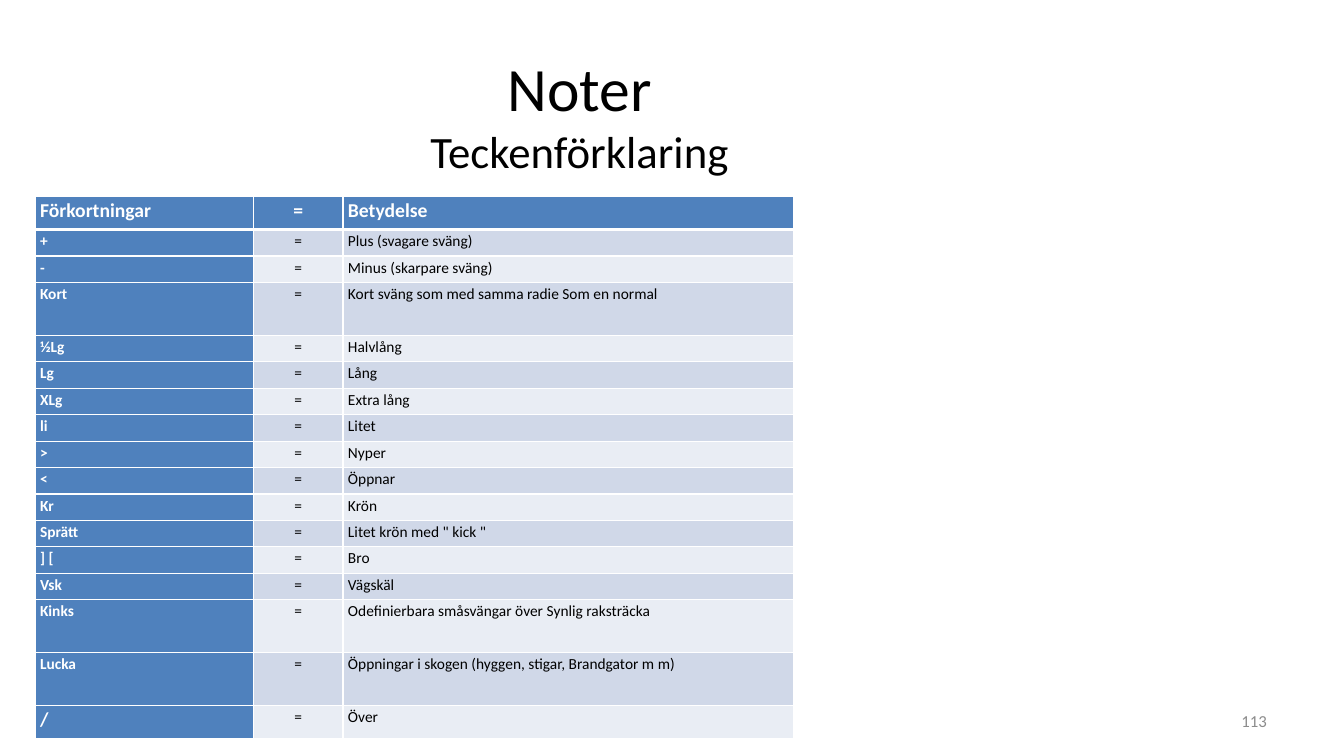
import dataclasses

import pptx
import pptx.dml.color
import pptx.enum.text
import pptx.oxml
import pptx.oxml.ns
import pptx.util

Pt = pptx.util.Pt
Align = pptx.enum.text.PP_ALIGN
Anchor = pptx.enum.text.MSO_ANCHOR


@dataclasses.dataclass(frozen=True)
class Theme:
    font: str = "Calibri"
    black: str = "000000"
    white: str = "FFFFFF"
    blue: str = "4F81BD"
    bands: tuple = ("D0D8E8", "E9EDF4")
    grey: str = "8C8C8C"
    title: float = 44
    subtitle: float = 32
    heading: float = 14
    number: float = 12
    cell: float = 11


class NotesSlide:
    def __init__(self, deck, theme):
        self.theme = theme
        self.slide = deck.slides.add_slide(deck.slide_layouts[5])

    def color(self, value):
        return pptx.dml.color.RGBColor.from_string(value)

    def add_span(self, para, text, size, color, bold=False):
        span = para.add_run()
        span.text = text
        span.font.name = self.theme.font
        span.font.size = Pt(size)
        span.font.bold = bold
        span.font.color.rgb = self.color(color)

    def add_title(self, title, subtitle, left, top, width, height):
        box = self.slide.shapes.title
        box.left, box.top, box.width, box.height = map(Pt, (left, top, width, height))
        frame = box.text_frame
        frame.auto_size = pptx.enum.text.MSO_AUTO_SIZE.NONE
        frame.vertical_anchor = Anchor.MIDDLE
        para = frame.paragraphs[0]
        para.alignment = Align.CENTER
        self.add_span(para, title, self.theme.title, self.theme.black)
        para.add_line_break()
        self.add_span(para, subtitle, self.theme.subtitle, self.theme.black)

    def add_number(self, text, left, top, width, height):
        box = self.slide.shapes.add_textbox(*map(Pt, (left, top, width, height)))
        frame = box.text_frame
        frame.word_wrap = True
        frame.vertical_anchor = Anchor.MIDDLE
        para = frame.paragraphs[0]
        para.alignment = Align.RIGHT
        self.add_span(para, text, self.theme.number, self.theme.grey)

    def add_borders(self, cell, widths):
        properties = cell._tc.get_or_add_tcPr()
        for index, (side, width) in enumerate(zip("LRTB", widths)):
            border = pptx.oxml.parse_xml(
                f'<a:ln{side} {pptx.oxml.ns.nsdecls("a")} w="{Pt(width)}">'
                f'<a:solidFill><a:srgbClr val="{self.theme.white}"/></a:solidFill>'
                f'</a:ln{side}>'
            )
            properties.insert(index, border)

    def fill_cell(self, cell, text, size, fill, bold, centered):
        cell.margin_left, cell.margin_right = Pt(3.6), Pt(17.3)
        cell.margin_top, cell.margin_bottom = Pt(0.7), Pt(0)
        cell.fill.solid()
        cell.fill.fore_color.rgb = self.color(fill)
        para = cell.text_frame.paragraphs[0]
        para.line_spacing = 1.07
        if centered:
            para.alignment = Align.CENTER
            para._p.get_or_add_pPr().set("marL", str(Pt(13.7)))
        color = self.theme.white if bold else self.theme.black
        self.add_span(para, text, size, color, bold)

    def add_table(self, rows, heights, widths, left, top):
        frame = self.slide.shapes.add_table(
            len(rows), len(widths), Pt(left), Pt(top), Pt(sum(widths)), Pt(sum(heights))
        )
        table = frame.table
        for column, width in zip(table.columns, widths):
            column.width = Pt(width)
        for row_index, (texts, height) in enumerate(zip(rows, heights)):
            table.rows[row_index].height = Pt(height)
            header = row_index == 0
            band = self.theme.bands[(row_index - 1) % 2]
            for column_index, text in enumerate(texts):
                bold = header or column_index == 0
                large = header or text == "/"
                cell = table.cell(row_index, column_index)
                self.fill_cell(
                    cell,
                    text,
                    self.theme.heading if large else self.theme.cell,
                    self.theme.blue if bold else band,
                    bold,
                    column_index == 1,
                )
                top_width = 3 if row_index == 1 else 1
                self.add_borders(cell, (1, 1, top_width, 3 if header else 1))


ABBREVIATIONS = [
    ("Förkortningar", "Betydelse"),
    ("+", "Plus (svagare sväng)"),
    ("-", "Minus (skarpare sväng)"),
    ("Kort", "Kort sväng som med samma radie Som en normal"),
    ("½Lg", "Halvlång"),
    ("Lg", "Lång"),
    ("XLg", "Extra lång"),
    ("li", "Litet"),
    (">", "Nyper"),
    ("<", "Öppnar"),
    ("Kr", "Krön"),
    ("Sprätt", 'Litet krön med " kick "'),
    ("] [", "Bro"),
    ("Vsk", "Vägskäl"),
    ("Kinks", "Odefinierbara småsvängar över Synlig raksträcka"),
    ("Lucka", "Öppningar i skogen (hyggen, stigar, Brandgator m m)"),
    ("/", "Över"),
]
ROW_HEIGHT = 18.9
SPECIAL_HEIGHTS = {
    "Förkortningar": 23.5,
    "/": 23.5,
    **dict.fromkeys(("Kort", "Kinks", "Lucka"), 2 * ROW_HEIGHT),
}


def main():
    deck = pptx.Presentation()
    deck.slide_width, deck.slide_height = Pt(960), Pt(540)
    page = NotesSlide(deck, Theme())
    page.add_title("Noter", "Teckenförklaring", 0, 29, 828, 104)
    rows = [(sign, "=", meaning) for sign, meaning in ABBREVIATIONS]
    heights = [SPECIAL_HEIGHTS.get(sign, ROW_HEIGHT) for sign, _ in ABBREVIATIONS]
    page.add_table(rows, heights, (156, 64, 322), 25, 140.5)
    page.add_number("113", 688, 500.5, 224, 29)
    deck.save("out.pptx")


if __name__ == "__main__":
    main()
